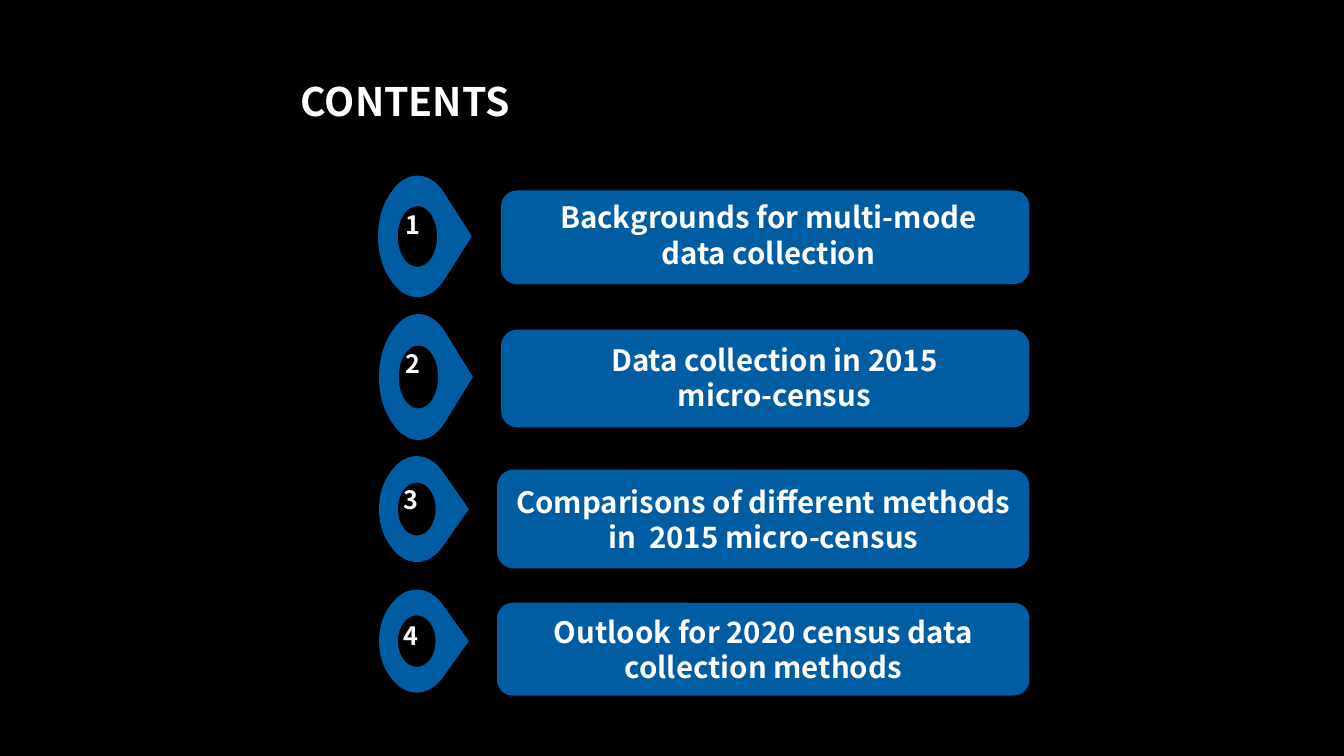
from lxml import etree
from pptx import Presentation
from pptx import util as u
from pptx.dml.color import RGBColor
from pptx.enum import shapes, text
from pptx.oxml import ns

BLACK, WHITE, BLUE = "000000", "FFFFFF", "005DA2"
FONT = "Noto Sans CJK SC"
BAR_RIGHT = 10.21

# Marker outlines: x from -1 to 1 across the marker, y from 0 to 1 towards its tip.
# After the start point, each segment is (end,) for a line
# or (control, control, end) for a curve.
HOLE = [
    (0, 0.21),
    [((-0.39, 0.21), (-0.71, 0.3), (-0.71, 0.42)),
     ((-0.71, 0.54), (-0.39, 0.63), (0, 0.63)),
     ((0.39, 0.63), (0.71, 0.54), (0.71, 0.42)),
     ((0.71, 0.3), (0.39, 0.21), (0, 0.21))],
]
DROP = [
    (0, 0),
    [((0.37, 0), (0.72, 0.04), (1, 0.13)),
     ((1.56, 0.29), (1.56, 0.55), (1, 0.71)),
     ((0, 1),),
     ((-1, 0.71),),
     ((-1.56, 0.55), (-1.56, 0.29), (-1, 0.13)),
     ((-0.72, 0.04), (-0.37, 0), (0, 0))],
]

# number, marker box, number position, bar (left, top, height), label lines,
# label box (None: the label sits in the bar)
ITEMS = [
    ("1", (3.75, 1.92, 0.93, 0.85), (3.92, 2.03), (4.97, 1.89, 0.93),
     ["Backgrounds for multi-mode data collection"], (5.19, 1.93, 4.86, 0.81)),
    ("2", (3.76, 3.3, 0.93, 0.88), (3.92, 3.41), (4.97, 3.27, 0.97),
     ["Data collection in 2015", "micro-census"], (5.18, 3.34, 5, 0.81)),
    ("3", (3.76, 4.68, 0.89, 0.74), (3.9, 4.76), (4.93, 4.66, 0.98),
     ["Comparisons of different methods in  2015 micro-census"], None),
    ("4", (3.76, 6, 0.89, 0.72), (3.9, 6.1), (4.93, 5.98, 0.92),
     ["Outlook for 2020 census data collection methods"], None),
]


def color(hex_string):
    return RGBColor.from_string(hex_string)


def inches(box):
    return [u.Inches(length) for length in box]


def paint(shape):
    shape.shadow.inherit = False
    shape.fill.solid()
    shape.fill.fore_color.rgb = color(BLUE)
    shape.line.fill.background()


def write(shape, lines, size, align, anchor, wrap):
    frame = shape.text_frame
    frame.text = "\n".join(lines)
    frame.word_wrap = wrap
    frame.vertical_anchor = anchor
    for paragraph in frame.paragraphs:
        paragraph.alignment = align
        for name, value in {"size": u.Pt(size), "bold": True, "name": FONT}.items():
            setattr(paragraph.font, name, value)
        paragraph.font.color.rgb = color(WHITE)


def bend(outline, segments, place):
    """Turn the outline's straight segments into curves where controls are given."""
    lines = list(outline._element.iter(ns.qn("a:lnTo")))
    for line, (*controls, _) in zip(lines, segments):
        if not controls:
            continue
        curve = etree.Element(ns.qn("a:cubicBezTo"))
        for control in controls:
            x, y = place(control)
            etree.SubElement(curve, ns.qn("a:pt"),
                             x=str(x - outline.left), y=str(y - outline.top))
        curve.append(line[0])
        line.getparent().replace(line, curve)


def add_marker(group, box, number, number_at):
    left, top, length, spread = box
    center_x, center_y = left + length / 2, top + spread / 2

    def place(point):
        x, y = point
        return inches((center_x + x * spread / 2, center_y + (y - 0.5) * length))

    builder = group.shapes.build_freeform(*place(HOLE[0]))
    for start, segments in (HOLE, DROP):
        if start != HOLE[0]:
            builder.move_to(*place(start))
        builder.add_line_segments([place(segment[-1]) for segment in segments], close=True)
    outline = builder.convert_to_shape()
    bend(outline, HOLE[1] + DROP[1], place)
    outline.rotation = 270
    paint(outline)
    digit = group.shapes.add_textbox(*inches((*number_at, 0.36, 0.4)))
    write(digit, [number], 18, text.PP_ALIGN.LEFT, text.MSO_ANCHOR.TOP, False)


def add_bar(group, box):
    bar = group.shapes.add_shape(shapes.MSO_SHAPE.ROUNDED_RECTANGLE, *inches(box))
    paint(bar)
    return bar


def add_label(slide, bar, lines, box):
    label = slide.shapes.add_textbox(*inches(box)) if box else bar
    anchor = text.MSO_ANCHOR.TOP if box else text.MSO_ANCHOR.MIDDLE
    write(label, lines, 21, text.PP_ALIGN.CENTER, anchor, True)


def add_title(slide, box):
    title = slide.shapes.title
    title.left, title.top, title.width, title.height = inches(box)
    write(title, ["CONTENTS"], 28, text.PP_ALIGN.CENTER, text.MSO_ANCHOR.MIDDLE, False)


def build_contents(deck):
    slide = deck.slides.add_slide(deck.slide_layouts[5])
    slide.background.fill.solid()
    slide.background.fill.fore_color.rgb = color(BLACK)
    add_title(slide, (2.82, 0.72, 2.4, 0.57))
    for number, marker_box, number_at, (left, top, height), lines, label_box in ITEMS:
        group = slide.shapes.add_group_shape()
        bar = add_bar(group, (left, top, BAR_RIGHT - left, height))
        add_marker(group, marker_box, number, number_at)
        add_label(slide, bar, lines, label_box)


def main():
    deck = Presentation()
    deck.slide_width, deck.slide_height = inches((13.33, 7.5))
    build_contents(deck)
    deck.save("out.pptx")


if __name__ == "__main__":
    main()
